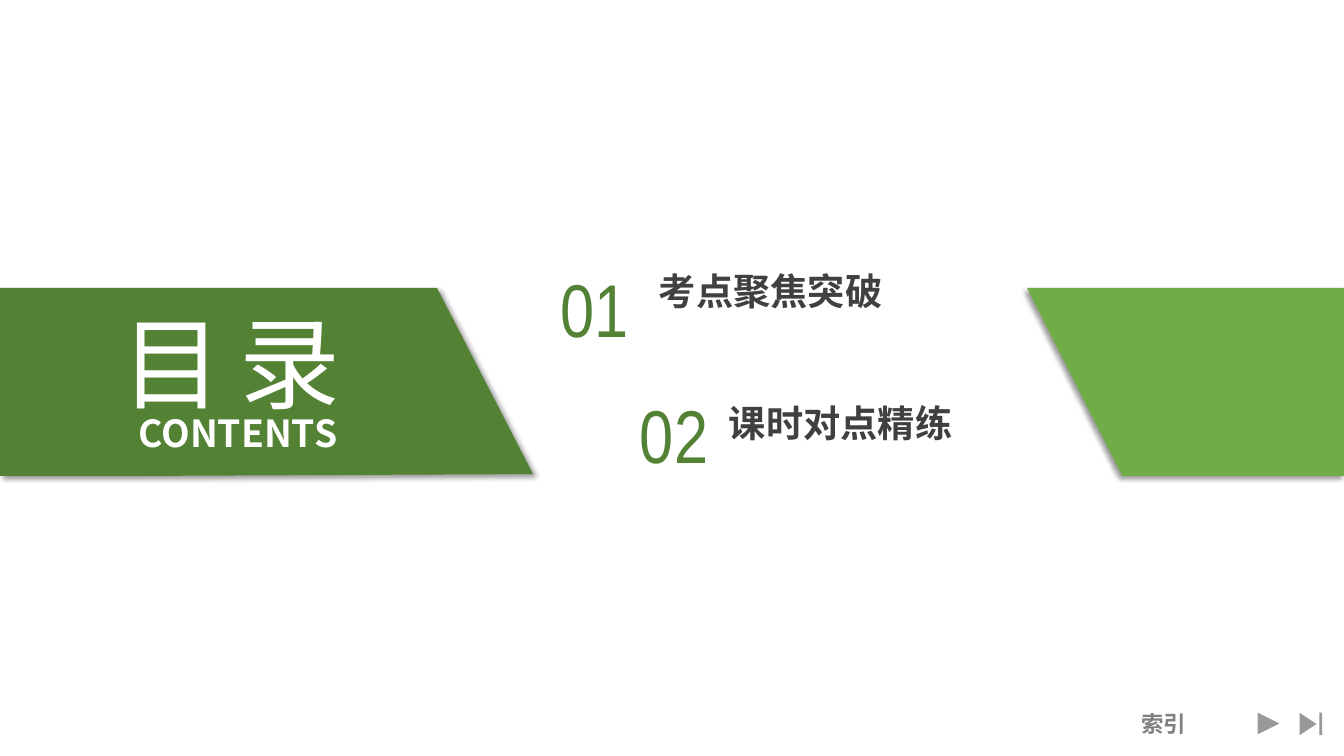
from pptx import Presentation
from pptx.dml.color import RGBColor
from pptx.enum.shapes import MSO_SHAPE
from pptx.enum.text import MSO_ANCHOR, MSO_AUTO_SIZE, PP_ALIGN
from pptx.oxml import parse_xml
from pptx.oxml.ns import nsdecls
from pptx.util import Pt

PX = 914400 / 100.8
WHITE = RGBColor(0xFF, 0xFF, 0xFF)
DARK_GREEN = RGBColor(0x54, 0x82, 0x35)
LIGHT_GREEN = RGBColor(0x70, 0xAD, 0x47)
CHARCOAL = RGBColor(0x40, 0x40, 0x40)
GRAY = RGBColor(0x80, 0x80, 0x80)

CJK = "Noto Sans CJK SC"
TITLE = {"name": CJK, "size": Pt(72), "color": WHITE}
SUBTITLE = {"name": CJK, "size": Pt(26.6), "bold": True, "color": WHITE}
NUMBER = {"name": "Arial Narrow", "size": Pt(53.4), "color": DARK_GREEN}
TOPIC = {"name": CJK, "size": Pt(26.6), "bold": True, "color": CHARCOAL}
INDEX = {"name": CJK, "size": Pt(16), "bold": True, "color": GRAY}


def emu(*lengths):
    return [round(length * PX) for length in lengths]


def shadow(angle):
    return parse_xml(
        f'<a:effectLst {nsdecls("a")}><a:outerShdw blurRad="50800" dist="38100" '
        f'dir="{angle * 60000}" algn="tl" rotWithShape="0"><a:srgbClr val="000000">'
        '<a:alpha val="40000"/></a:srgbClr></a:outerShdw></a:effectLst>')


def write(frame, text, style, align=PP_ALIGN.LEFT):
    paragraph = frame.paragraphs[0]
    paragraph.alignment = align
    run = paragraph.add_run()
    run.text = text
    for key, value in style.items():
        if key == "color":
            run.font.color.rgb = value
        else:
            setattr(run.font, key, value)
    properties = run.font._element
    latin = properties.find("{*}latin")
    latin.addnext(parse_xml(f'<a:ea {nsdecls("a")} typeface="{style["name"]}"/>'))
    return properties


def add_label(slide, box, text, style, align=PP_ALIGN.LEFT, wrap=False):
    frame = slide.shapes.add_textbox(*emu(*box)).text_frame
    frame.word_wrap = wrap
    frame.auto_size = MSO_AUTO_SIZE.SHAPE_TO_FIT_TEXT
    return write(frame, text, style, align)


def add_button(slide, preset, box, color=None):
    button = slide.shapes.add_shape(preset, *emu(*box))
    button.shadow.inherit = False
    button.line.fill.background()
    if color is None:
        button.fill.background()
    else:
        button.fill.solid()
        button.fill.fore_color.rgb = color
    return button


def add_banner(slide, box, corners, color, angle):
    left, top, width, height = box
    points = [emu(left + x * width, top + y * height) for x, y in corners]
    builder = slide.shapes.build_freeform(*points[0])
    builder.add_line_segments(points[1:])
    banner = builder.convert_to_shape()
    banner.fill.solid()
    banner.fill.fore_color.rgb = color
    banner.line.fill.background()
    banner._element.spPr.append(shadow(angle))


def add_navigation(slide, box):
    left, top, width, height = box
    add_button(slide, MSO_SHAPE.ACTION_BUTTON_FORWARD_OR_NEXT,
               (left + width - 72, top, 29, 29), WHITE)
    add_button(slide, MSO_SHAPE.ACTION_BUTTON_END,
               (left + width - 30, top, 30, height), WHITE)
    frame = add_button(slide, MSO_SHAPE.ROUNDED_RECTANGLE,
                       (left, top + 2, 82, 25)).text_frame
    frame.vertical_anchor = MSO_ANCHOR.MIDDLE
    write(frame, "索引", INDEX, PP_ALIGN.CENTER)


def add_heading(slide, box):
    left, top, width, height = box
    add_banner(slide, box, [(0, 0), (0.82, 0), (1, 0.99), (0.25, 1), (0, 1)],
               DARK_GREEN, 45)
    title = add_label(slide, (left + 112, top + 8, 320, 132), "目 录", TITLE, wrap=True)
    title.set("spc", "-200")
    add_label(slide, (left + 122, top + 117, 232, 55), "CONTENTS", SUBTITLE,
              PP_ALIGN.CENTER)


def add_entry(slide, box, number, topic, topic_left, topic_top):
    left, top, width, height = box
    add_label(slide, (left + topic_left, top + topic_top, 244, 55), topic, TOPIC)
    digits = add_label(slide, box, number, NUMBER)
    digits.find("{*}solidFill").addnext(shadow(45))


def add_contents_slide(deck):
    slide = deck.slides.add_slide(deck.slide_layouts[6])
    add_navigation(slide, (1123, 709, 203, 30))
    add_heading(slide, (0, 288, 533, 188))
    add_entry(slide, (551, 258, 90, 101), "01", "考点聚焦突破", 98, 5)
    add_entry(slide, (630, 384, 101, 101), "02", "课时对点精练", 89, 11)
    add_banner(slide, (1027, 288, 318, 188), [(0, 0), (1, 0), (1, 1), (0.3, 1)],
               LIGHT_GREEN, 135)


def main():
    deck = Presentation()
    deck.slide_width, deck.slide_height = emu(1344, 756)
    add_contents_slide(deck)
    deck.save("out.pptx")


if __name__ == "__main__":
    main()
